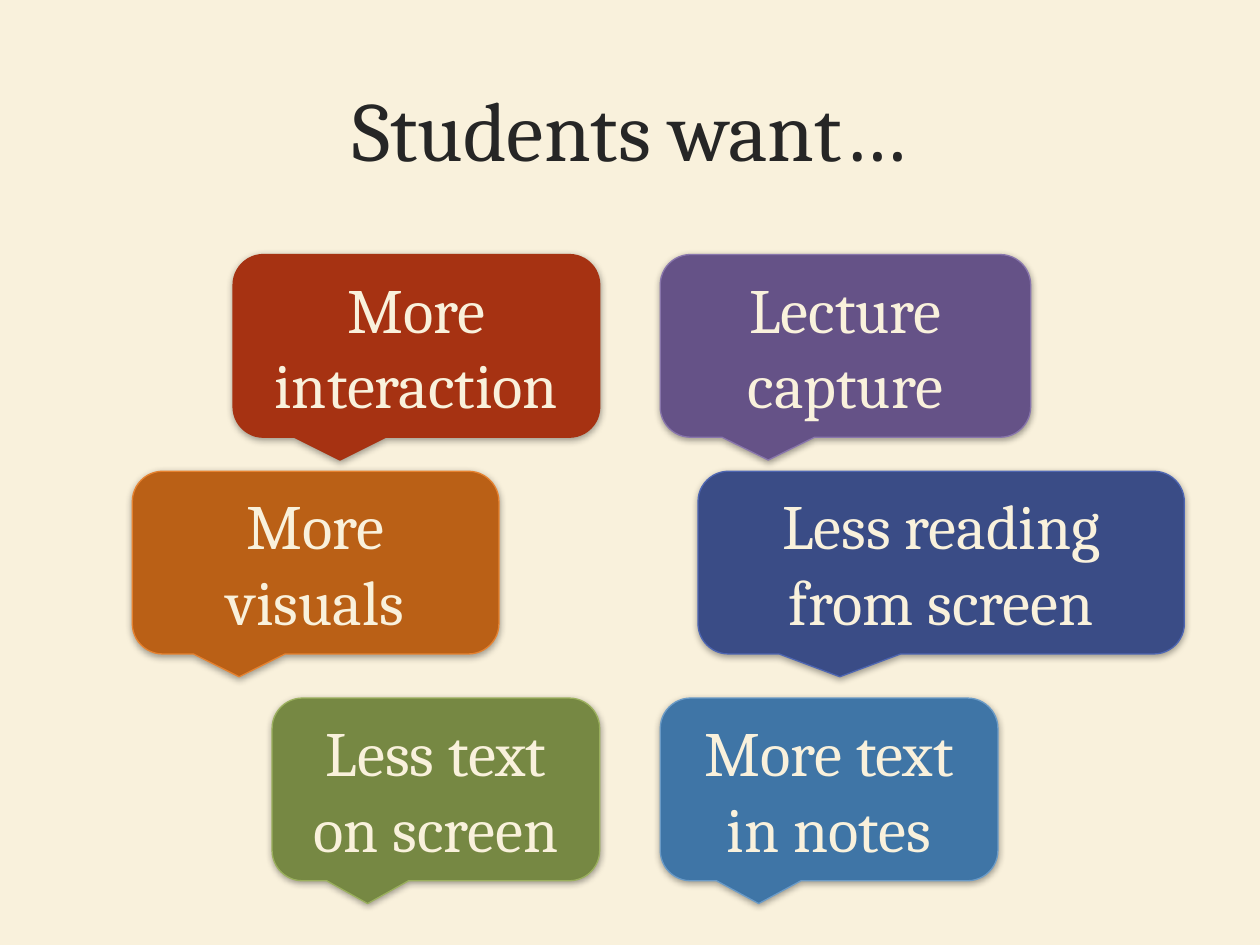
from lxml import etree
from pptx import Presentation
from pptx import util as u
from pptx.dml.color import RGBColor
from pptx.enum import shapes, text
from pptx.oxml.ns import qn

COLORS = {
    "cream": "F9F1DC", "ink": "262626", "shadow": "000000",
    "red": "A63212", "red_edge": "A63212",
    "purple": "655287", "purple_edge": "8976AC",
    "orange": "BA6016", "orange_edge": "E68230",
    "navy": "3A4C86", "navy_edge": "4E66B2",
    "green": "768843", "green_edge": "9BB05E",
    "blue": "3F75A6", "blue_edge": "6B9BC7",
}
FONT = "Cambria"


def rgb(name):
    return RGBColor.from_string(COLORS[name])


def write(sp, words, size, color):
    tf = sp.text_frame
    frame = {"word_wrap": True, "vertical_anchor": text.MSO_ANCHOR.MIDDLE,
             "auto_size": text.MSO_AUTO_SIZE.NONE}
    for key, value in frame.items():
        setattr(tf, key, value)
    p = tf.paragraphs[0]
    p.alignment = text.PP_ALIGN.CENTER
    r = p.add_run()
    r.text = words
    for key, value in {"name": FONT, "size": u.Pt(size), "bold": False}.items():
        setattr(r.font, key, value)
    r.font.color.rgb = rgb(color)


prs = Presentation()
prs.slide_width, prs.slide_height = u.Inches(10), u.Inches(7.5)
s = prs.slides.add_slide(prs.slide_layouts[5])
s.background.fill.solid()
s.background.fill.fore_color.rgb = rgb("cream")

# Title
title = s.shapes.title
box = {"left": 0.6, "top": 0.48, "width": 8.79, "height": 1.07}
for key, value in box.items():
    setattr(title, key, u.Inches(value))
write(title, "Students want…", 48, "ink")

# Callouts: two columns facing a central gutter, the middle row pushed outwards
CENTER, HALF_GUTTER, HEIGHT = 5, 0.24, 1.45
ROW_TOPS = [2.02, 3.74, 5.54]
# row, side (-1 left, 1 right), outward shift, width, color, words
callouts = [
    (0, -1, 0, 2.91, "red", "More interaction"),
    (1, -1, 0.8, 2.91, "orange", "More visuals"),
    (2, 1, 0, 2.68, "blue", "More text in notes"),
    (2, -1, 0, 2.6, "green", "Less text on screen"),
    (1, 1, 0.3, 3.86, "navy", "Less reading from screen"),
    (0, 1, 0, 2.94, "purple", "Lecture capture"),
]
for row, side, shift, width, color, words in callouts:
    inner = CENTER + side * (HALF_GUTTER + shift)
    left = inner if side > 0 else inner - width
    sp = s.shapes.add_shape(
        shapes.MSO_SHAPE.ROUNDED_RECTANGULAR_CALLOUT,
        *map(u.Inches, (left, ROW_TOPS[row], width, HEIGHT)))
    sp.fill.solid()
    sp.fill.fore_color.rgb = rgb(color)
    sp.line.color.rgb = rgb(color + "_edge")
    sp.line.width = u.Pt(0.75)
    write(sp, words, 36, "cream")

    # Soft shadow straight below
    sp.shadow.inherit = False
    effects = sp._element.spPr.find(qn("a:effectLst"))
    shadow = etree.SubElement(
        effects, qn("a:outerShdw"), blurRad=str(u.Pt(4)), dist=str(u.Pt(1)),
        dir=str(90 * 60000), rotWithShape="0")
    shade = etree.SubElement(shadow, qn("a:srgbClr"), val=COLORS["shadow"])
    etree.SubElement(shade, qn("a:alpha"), val="37000")

prs.save("out.pptx")
